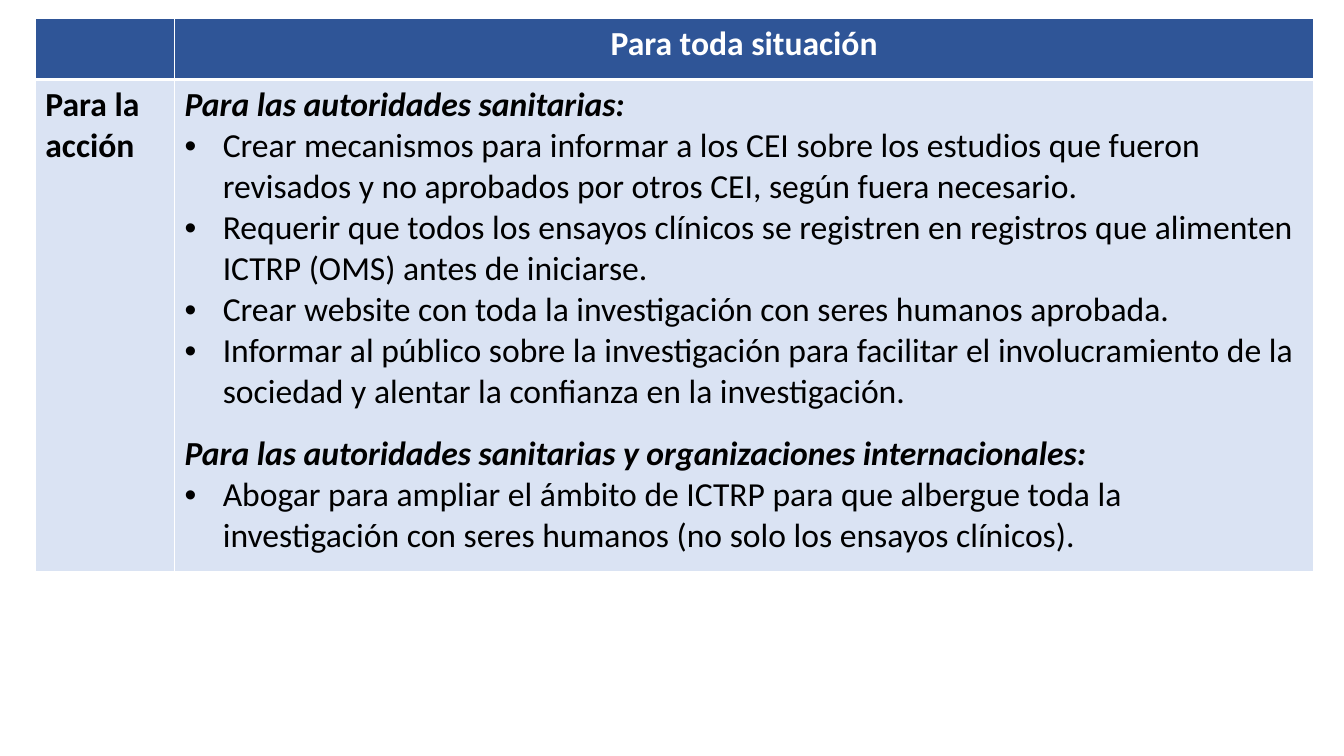
from dataclasses import dataclass

import lxml.etree
import pptx
import pptx.dml.color
import pptx.enum.text
import pptx.oxml.ns
import pptx.presentation
import pptx.table
import pptx.text.text
import pptx.util


@dataclass(frozen=True)
class Theme:
    font: str = "Calibri"
    size: float = 24
    header_fill: str = "2F5597"
    body_fill: str = "DAE3F3"
    header_text: str = "FFFFFF"
    body_text: str = "000000"
    border: str = "FFFFFF"
    thin: float = 1
    thick: float = 3


@dataclass(frozen=True)
class Line:
    text: str
    bold: bool = False
    italic: bool = False
    bullet: bool = False
    centered: bool = False
    space_before: float = 0


@dataclass(frozen=True)
class CellContent:
    lines: tuple[Line, ...] = ()


THEME = Theme()
INDENT = pptx.util.Inches(0.38)
COLUMN_WIDTHS = (1.38, 11.3)
ROW_HEIGHTS = (0.61, 4.88)

RECOMMENDATIONS = (
    Line("Para las autoridades sanitarias:", bold=True, italic=True),
    Line("Crear mecanismos para informar a los CEI sobre los estudios que fueron "
         "revisados y no aprobados por otros CEI, según fuera necesario.", bullet=True),
    Line("Requerir que todos los ensayos clínicos se registren en registros que "
         "alimenten ICTRP (OMS) antes de iniciarse.", bullet=True),
    Line("Crear website con toda la investigación con seres humanos aprobada.", bullet=True),
    Line("Informar al público sobre la investigación para facilitar el involucramiento "
         "de la sociedad y alentar la confianza en la investigación.", bullet=True),
    Line("Para las autoridades sanitarias y organizaciones internacionales:",
         bold=True, italic=True, space_before=15),
    Line("Abogar para ampliar el ámbito de ICTRP para que albergue toda la "
         "investigación con seres humanos (no solo los ensayos clínicos).", bullet=True),
)

ROWS = (
    (CellContent(), CellContent((Line("Para toda situación", bold=True, centered=True),))),
    (CellContent((Line("Para la acción", bold=True),)), CellContent(RECOMMENDATIONS)),
)


def rgb(color: str) -> pptx.dml.color.RGBColor:
    return pptx.dml.color.RGBColor.from_string(color)


def add_bullet(paragraph: pptx.text.text._Paragraph) -> None:
    properties = paragraph._p.get_or_add_pPr()
    properties.set("marL", str(INDENT))
    properties.set("indent", str(-INDENT))
    bullet_font = lxml.etree.SubElement(properties, pptx.oxml.ns.qn("a:buFont"))
    bullet_font.set("typeface", "Arial")
    bullet = lxml.etree.SubElement(properties, pptx.oxml.ns.qn("a:buChar"))
    bullet.set("char", "•")


def write_line(paragraph: pptx.text.text._Paragraph, line: Line, color: str) -> None:
    paragraph.text = line.text
    if line.bullet:
        add_bullet(paragraph)
    if line.centered:
        paragraph.alignment = pptx.enum.text.PP_ALIGN.CENTER
    if line.space_before:
        paragraph.space_before = pptx.util.Pt(line.space_before)
    paragraph.font.name = THEME.font
    paragraph.font.size = pptx.util.Pt(THEME.size)
    paragraph.font.bold = line.bold
    paragraph.font.italic = line.italic
    paragraph.font.color.rgb = rgb(color)


def add_borders(cell: pptx.table._Cell, top: float, bottom: float) -> None:
    properties = cell._tc.get_or_add_tcPr()
    widths = {"lnL": THEME.thin, "lnR": THEME.thin, "lnT": top, "lnB": bottom}
    for side, width in widths.items():
        border = lxml.etree.SubElement(properties, pptx.oxml.ns.qn(f"a:{side}"))
        border.set("w", str(pptx.util.Pt(width)))
        fill = lxml.etree.SubElement(border, pptx.oxml.ns.qn("a:solidFill"))
        color = lxml.etree.SubElement(fill, pptx.oxml.ns.qn("a:srgbClr"))
        color.set("val", THEME.border)


def draw_cell(cell: pptx.table._Cell, content: CellContent, is_header: bool) -> None:
    if is_header:
        add_borders(cell, THEME.thin, THEME.thick)
    else:
        add_borders(cell, THEME.thick, THEME.thin)
    cell.fill.solid()
    cell.fill.fore_color.rgb = rgb(THEME.header_fill if is_header else THEME.body_fill)
    text_color = THEME.header_text if is_header else THEME.body_text
    frame = cell.text_frame
    for index, line in enumerate(content.lines):
        paragraph = frame.add_paragraph() if index else frame.paragraphs[0]
        write_line(paragraph, line, text_color)


def add_recommendations(presentation: pptx.presentation.Presentation) -> None:
    slide = presentation.slides.add_slide(presentation.slide_layouts[6])
    table = slide.shapes.add_table(
        len(ROWS), len(COLUMN_WIDTHS),
        pptx.util.Inches(0.35), pptx.util.Inches(0.18),
        pptx.util.Inches(sum(COLUMN_WIDTHS)), pptx.util.Inches(sum(ROW_HEIGHTS)),
    ).table
    for column, width in zip(table.columns, COLUMN_WIDTHS):
        column.width = pptx.util.Inches(width)
    for row, height in zip(table.rows, ROW_HEIGHTS):
        row.height = pptx.util.Inches(height)
    for row_index, contents in enumerate(ROWS):
        for column_index, content in enumerate(contents):
            draw_cell(table.cell(row_index, column_index), content, row_index == 0)


def main() -> None:
    presentation = pptx.Presentation()
    presentation.slide_width = pptx.util.Inches(13.33)
    presentation.slide_height = pptx.util.Inches(7.5)
    add_recommendations(presentation)
    presentation.save("out.pptx")


if __name__ == "__main__":
    main()
